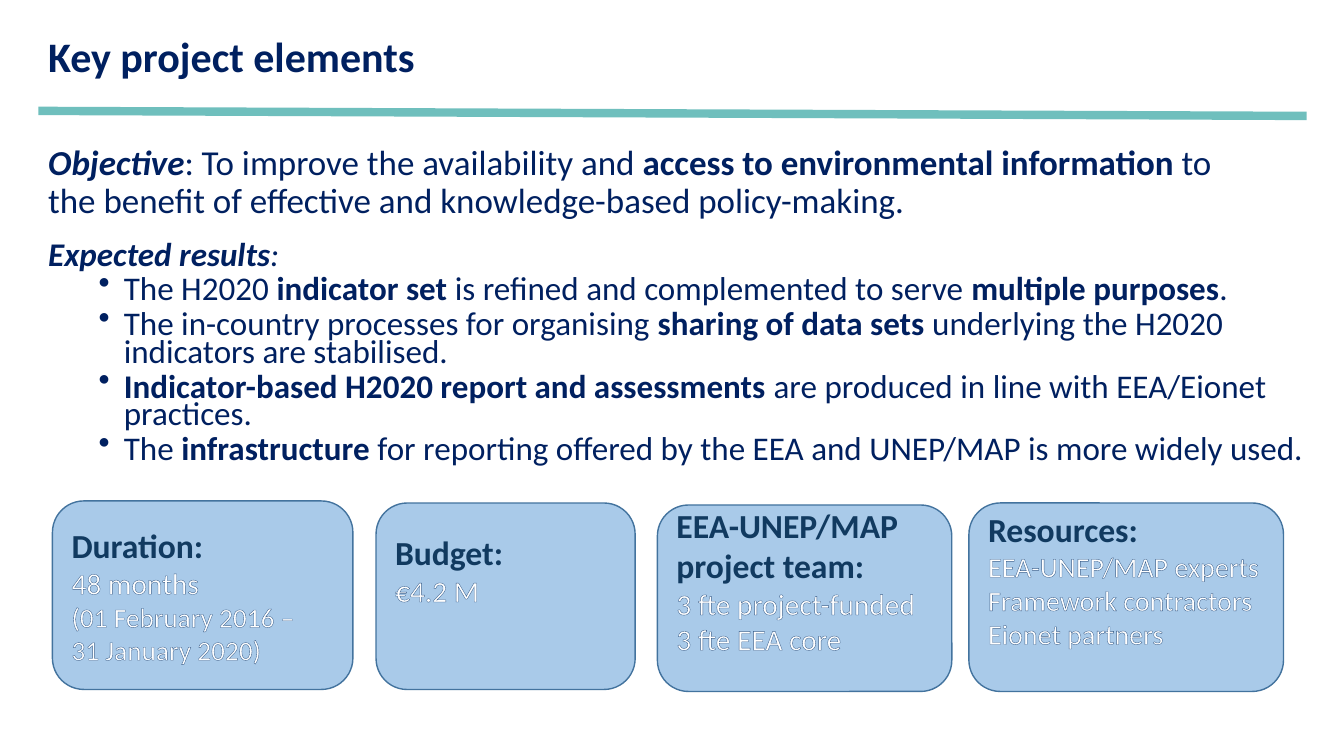
from lxml import etree
from pptx import Presentation
from pptx.dml.color import RGBColor
from pptx.enum import shapes, text
from pptx.oxml.ns import qn
from pptx.util import Inches, Pt

NAVY = RGBColor(0x00, 0x20, 0x60)
TEAL = RGBColor(0x6F, 0xBF, 0xBD)
CARD_BLUE = RGBColor(0x5B, 0x9B, 0xD5)
CARD_EDGE = RGBColor(0x43, 0x73, 0x9E)
HEADING_BLUE = RGBColor(0x11, 0x3A, 0x60)
TEXT_EDGE = RGBColor(0x3A, 0x5F, 0x8C)
WHITE = RGBColor(0xFF, 0xFF, 0xFF)

OBJECTIVE = [("Objective", "bi"),
             (": To improve the availability and ", ""),
             ("access to environmental information ", "b"),
             ("to the benefit of effective and knowledge-based policy-making.", "")]
EXPECTED = [("Expected results", "bi"), (":", "i")]
RESULTS = [
    [("The H2020 ", ""), ("indicator set ", "b"),
     ("is refined and complemented to serve ", ""), ("multiple purposes", "b"), (".", "")],
    [("The in-country processes for organising ", ""), ("sharing of data sets ", "b"),
     ("underlying the H2020 indicators are stabilised.", "")],
    [("Indicator-based H2020 report and assessments ", "b"),
     ("are produced in line with EEA/Eionet practices.", "")],
    [("The ", ""), ("infrastructure", "b"),
     (" for reporting offered by the EEA and UNEP/MAP is more widely used.", "")],
]

TOP, MIDDLE = text.MSO_ANCHOR.TOP, text.MSO_ANCHOR.MIDDLE
CARDS = [
    ((3.73, 4.99, 2.57, 1.85), TOP, (0.2, 0.05), "Budget:", [("€4.2 M", 21)]),
    ((0.52, 4.97, 2.98, 1.87), MIDDLE, (0.05, 0.05), "Duration:",
     [("48 months", 21), ("(01 February 2016 –", 19.5), ("31 January 2020)", 19.5)]),
    ((6.52, 5.01, 2.92, 1.85), MIDDLE, (0.05, 0.4), "EEA-UNEP/MAP project team:",
     [("3 fte project-funded", 21), ("3 fte EEA core", 21)]),
    ((9.61, 4.99, 3.12, 1.87), MIDDLE, (0.05, 0.4), "Resources:",
     [("EEA-UNEP/MAP experts", 20), ("Framework contractors", 20), ("Eionet partners", 20)]),
]


def set_font(r, size, color, style=""):
    f = r.font
    f.name, f.size = "Calibri", Pt(size)
    f.color.rgb = color
    f.bold, f.italic = "b" in style, "i" in style


def add_bullet(p):
    pPr = p._p.get_or_add_pPr()
    pPr.set("marL", str(Inches(0.75)))
    pPr.set("indent", str(Inches(-0.25)))
    etree.SubElement(pPr, qn("a:buChar")).set("char", "•")


def outline_text(r):
    ln = etree.Element(qn("a:ln"), w=str(Pt(0.75)))
    fill = etree.SubElement(ln, qn("a:solidFill"))
    etree.SubElement(fill, qn("a:srgbClr")).set("val", str(TEXT_EDGE))
    r.font._element.insert(0, ln)


def add_text(s, box, paragraphs, size, spacing, bulleted=False):
    tf = s.shapes.add_textbox(*map(Inches, box)).text_frame
    tf.word_wrap = True
    for i, runs in enumerate(paragraphs):
        p = tf.add_paragraph() if i else tf.paragraphs[0]
        if bulleted and i:
            add_bullet(p)
            p.level = 1
            p.space_before = Pt(5)
        p.line_spacing = spacing
        for words, style in runs:
            r = p.add_run()
            r.text = words
            set_font(r, size, NAVY, style)


def add_rule(s, start, end):
    line = s.shapes.add_connector(shapes.MSO_CONNECTOR.STRAIGHT, *map(Inches, start + end))
    line.line.color.rgb = TEAL
    line.line.width = Pt(6)
    etree.SubElement(line._element.spPr, qn("a:effectLst"))


def add_card(s, box, anchor, margins, heading, details):
    sp = s.shapes.add_shape(shapes.MSO_SHAPE.ROUNDED_RECTANGLE, *map(Inches, box))
    sp.shadow.inherit = False
    sp.fill.solid()
    sp.fill.fore_color.rgb = CARD_BLUE
    clr = sp._element.spPr.find(qn("a:solidFill")).find(qn("a:srgbClr"))
    etree.SubElement(clr, qn("a:alpha")).set("val", "52000")
    sp.line.color.rgb = CARD_EDGE
    sp.line.width = Pt(1)
    tf = sp.text_frame
    tf.word_wrap = True
    tf.vertical_anchor = anchor
    tf.margin_top, tf.margin_bottom = map(Inches, margins)
    tf.text = "\n".join([heading] + [words for words, _ in details])
    for p in tf.paragraphs:
        p.alignment = text.PP_ALIGN.LEFT
    set_font(tf.paragraphs[0].runs[0], 24, HEADING_BLUE, "b")
    for p, (_, size) in zip(tf.paragraphs[1:], details):
        r = p.runs[0]
        set_font(r, size, WHITE)
        outline_text(r)


def main():
    prs = Presentation()
    prs.slide_width, prs.slide_height = Inches(13.33), Inches(7.5)
    s = prs.slides.add_slide(prs.slide_layouts[6])
    add_text(s, (0.38, 0.31, 12.13, 0.6), [[("Key project elements", "b")]], 30, 0.9)
    add_text(s, (0.38, 1.39, 12.13, 0.9), [OBJECTIVE], 25, 0.9)
    add_rule(s, (0.38, 1.1), (12.96, 1.15))
    for card in CARDS:
        add_card(s, *card)
    add_text(s, (0.38, 2.37, 12.73, 2.4), [EXPECTED] + RESULTS, 23.6, 0.7, bulleted=True)
    prs.save("out.pptx")


if __name__ == "__main__":
    main()
